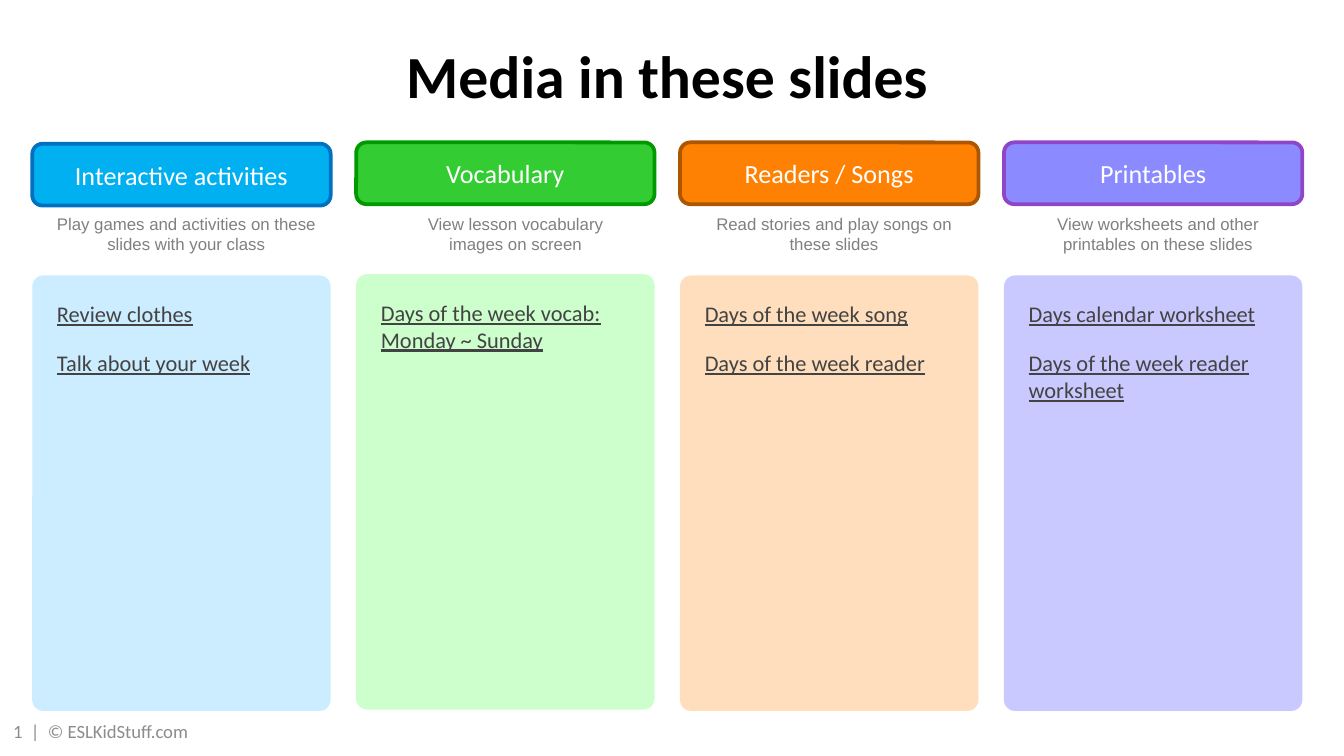
from dataclasses import dataclass
from typing import Optional

from pptx import Presentation
from pptx.dml.color import RGBColor
from pptx.enum.shapes import MSO_SHAPE
from pptx.enum.text import MSO_ANCHOR, PP_ALIGN
from pptx.shapes.autoshape import Shape
from pptx.slide import Slide
from pptx.text.text import TextFrame
from pptx.util import Pt

EMU_PER_PX = 9144  # 100 px to the inch


@dataclass(frozen=True)
class TextStyle:
    font: str
    size: int
    color: str
    bold: bool = False
    underline: bool = False
    align: PP_ALIGN = PP_ALIGN.LEFT
    space_after: int = 0


@dataclass(frozen=True)
class Theme:
    title: TextStyle = TextStyle("Calibri", 32, "000000", bold=True, align=PP_ALIGN.CENTER)
    header: TextStyle = TextStyle("Calibri", 14, "FFFFFF", align=PP_ALIGN.CENTER)
    caption: TextStyle = TextStyle("Arial", 9, "808080", align=PP_ALIGN.CENTER)
    item: TextStyle = TextStyle("Calibri", 12, "434343", underline=True, space_after=12)
    footer: TextStyle = TextStyle("Calibri", 10, "8C8C8C")
    blue: tuple[str, str, str] = ("00B0F0", "0070C0", "CCECFF")
    green: tuple[str, str, str] = ("33CC33", "009900", "CCFFCC")
    orange: tuple[str, str, str] = ("FF8104", "AC5600", "FFDEBD")
    purple: tuple[str, str, str] = ("8B8BFF", "8F45C7", "C9C9FF")
    outline_width: int = 2


@dataclass(frozen=True)
class Box:
    left: int
    top: int
    width: int
    height: int


@dataclass(frozen=True)
class MediaColumn:
    heading: str
    caption: str
    items: tuple[str, ...]
    colors: tuple[str, str, str]  # header fill, header outline, panel fill
    caption_left: int
    caption_width: int
    header_top: int = 106
    panel_top: int = 205


THEME = Theme()
SLIDE_WIDTH = 1000
COLUMN_LEFT, COLUMN_PITCH, COLUMN_WIDTH = 24, 241, 222
HEADER_HEIGHT, PANEL_HEIGHT = 46, 324
CAPTION_TOP, CAPTION_HEIGHT = 154, 40
PANEL_ROUNDING = 0.037
PANEL_INSETS = (16, 16, 10, 5)

COLUMNS = (
    MediaColumn(
        "Interactive activities",
        "Play games and activities on these slides with your class",
        ("Review clothes", "Talk about your week"),
        THEME.blue, 28, 221, header_top=107,
    ),
    MediaColumn(
        "Vocabulary",
        "View lesson vocabulary images on screen",
        ("Days of the week vocab: Monday ~ Sunday",),
        THEME.green, 298, 171, panel_top=204,
    ),
    MediaColumn(
        "Readers / Songs",
        "Read stories and play songs on these slides",
        ("Days of the week song", "Days of the week reader"),
        THEME.orange, 511, 219,
    ),
    MediaColumn(
        "Printables",
        "View worksheets and other printables on these slides",
        ("Days calendar worksheet", "Days of the week reader worksheet"),
        THEME.purple, 752, 219,
    ),
)


def px(length: int) -> int:
    return length * EMU_PER_PX


def place(box: Box) -> tuple[int, int, int, int]:
    return px(box.left), px(box.top), px(box.width), px(box.height)


def write(frame: TextFrame, lines: tuple[str, ...], style: TextStyle,
          anchor: MSO_ANCHOR = MSO_ANCHOR.TOP,
          insets: tuple[int, int, int, int] = (10, 5, 10, 5)) -> None:
    frame.word_wrap = True
    frame.vertical_anchor = anchor
    frame.margin_left, frame.margin_top, frame.margin_right, frame.margin_bottom = map(px, insets)
    for index, line in enumerate(lines):
        para = frame.paragraphs[0] if index == 0 else frame.add_paragraph()
        para.alignment = style.align
        para.space_after = Pt(style.space_after)
        span = para.add_run()
        span.text = line
        span.font.name = style.font
        span.font.size = Pt(style.size)
        span.font.bold = style.bold
        span.font.underline = style.underline
        span.font.color.rgb = RGBColor.from_string(style.color)


def add_label(page: Slide, box: Box, text: str, style: TextStyle,
              anchor: MSO_ANCHOR = MSO_ANCHOR.TOP) -> None:
    label = page.shapes.add_textbox(*place(box))
    write(label.text_frame, (text,), style, anchor)


def add_card(page: Slide, box: Box, fill: str, outline: Optional[str] = None) -> Shape:
    card = page.shapes.add_shape(MSO_SHAPE.ROUNDED_RECTANGLE, *place(box))
    card.shadow.inherit = False
    card.fill.solid()
    card.fill.fore_color.rgb = RGBColor.from_string(fill)
    if outline is None:
        card.line.fill.background()
    else:
        card.line.color.rgb = RGBColor.from_string(outline)
        card.line.width = Pt(THEME.outline_width)
    return card


def add_column(page: Slide, column: MediaColumn, left: int) -> None:
    header_fill, header_outline, panel_fill = column.colors

    # Caption under the header
    caption_box = Box(column.caption_left, CAPTION_TOP, column.caption_width, CAPTION_HEIGHT)
    add_label(page, caption_box, column.caption, THEME.caption)

    # Header button
    header_box = Box(left, column.header_top, COLUMN_WIDTH, HEADER_HEIGHT)
    header = add_card(page, header_box, header_fill, header_outline)
    write(header.text_frame, (column.heading,), THEME.header, MSO_ANCHOR.MIDDLE)

    # Panel with the media list
    panel = add_card(page, Box(left, column.panel_top, COLUMN_WIDTH, PANEL_HEIGHT), panel_fill)
    panel.adjustments[0] = PANEL_ROUNDING
    write(panel.text_frame, column.items, THEME.item, insets=PANEL_INSETS)


def main() -> None:
    # Widescreen page, 16:9
    deck = Presentation()
    deck.slide_width = px(SLIDE_WIDTH)
    deck.slide_height = px(SLIDE_WIDTH) * 9 // 16
    page = deck.slides.add_slide(deck.slide_layouts[6])

    # Footer and title
    add_label(page, Box(0, 529, 217, 30), "1  |  © ESLKidStuff.com", THEME.footer,
              MSO_ANCHOR.MIDDLE)
    add_label(page, Box(34, 24, 925, 54), "Media in these slides", THEME.title)

    # Media columns
    for index, column in enumerate(COLUMNS):
        add_column(page, column, COLUMN_LEFT + index * COLUMN_PITCH)

    deck.save("out.pptx")


if __name__ == "__main__":
    main()
